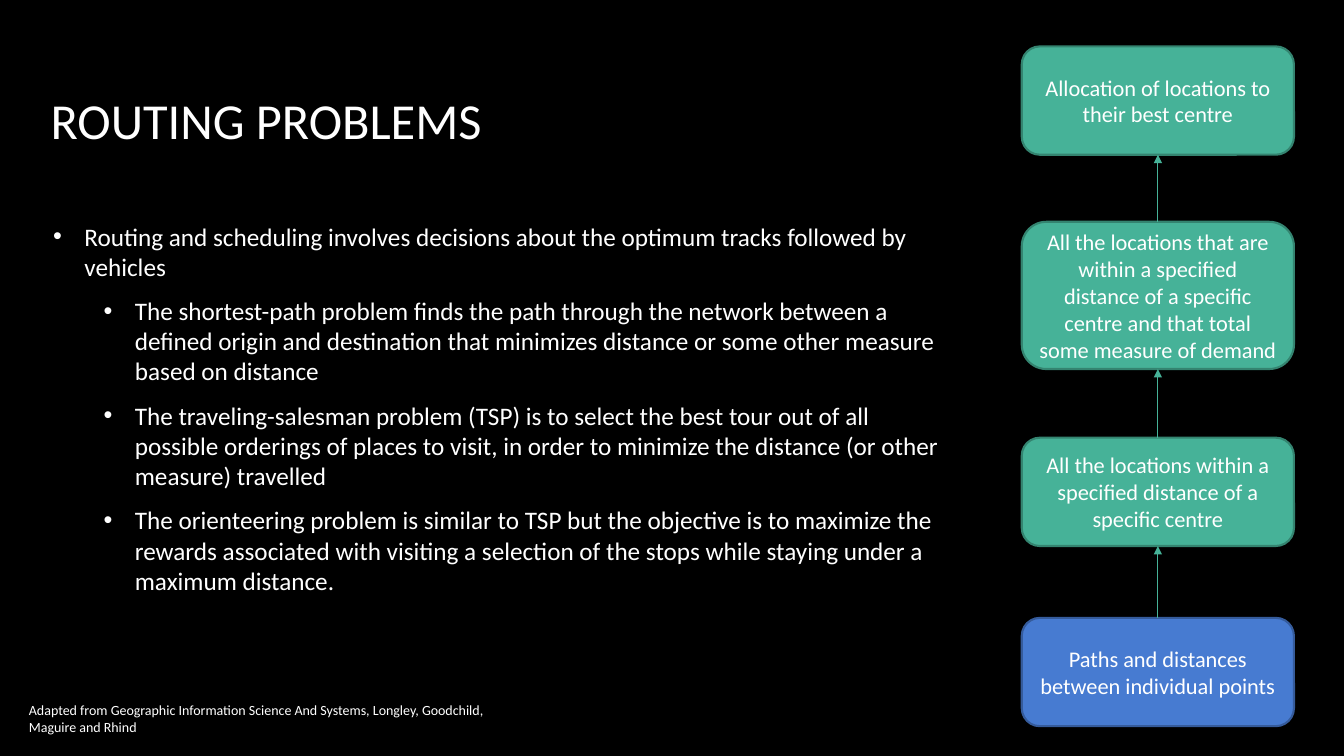
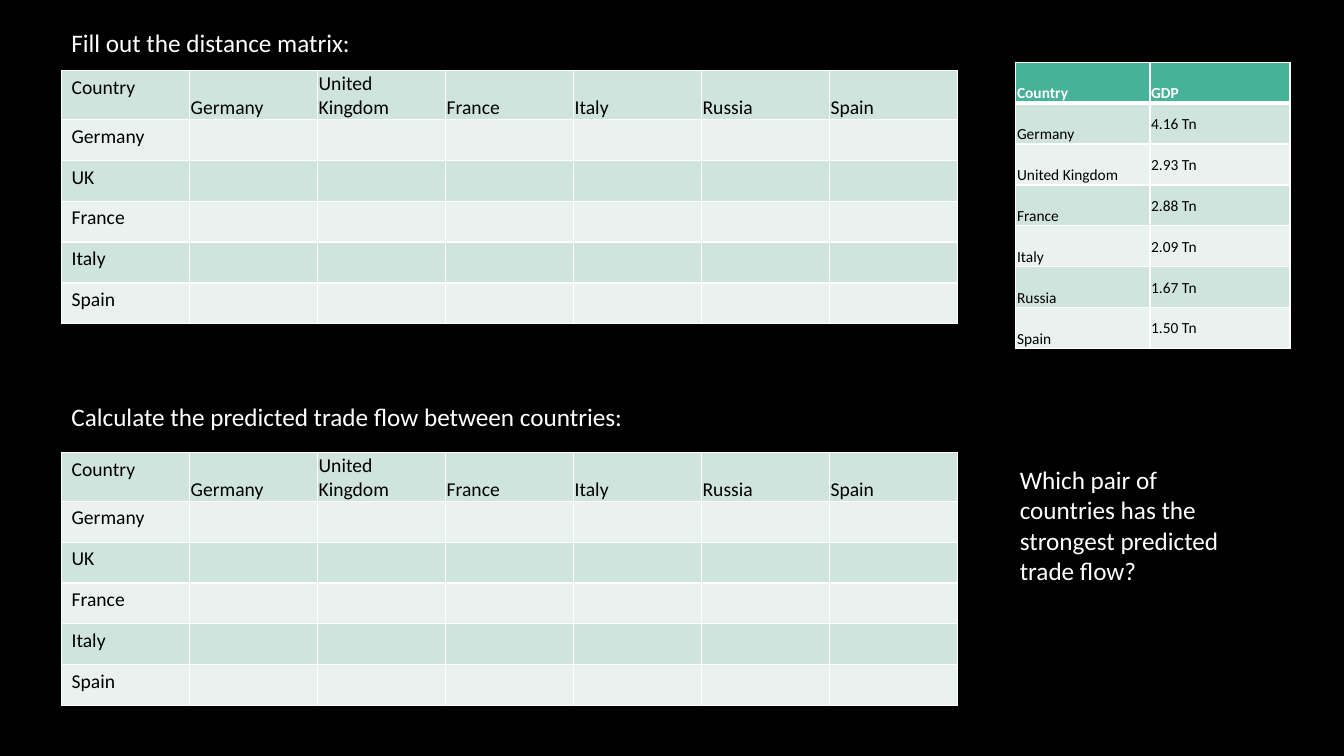
import pptx
import pptx.dml.color
import pptx.enum.shapes
import pptx.enum.text
import pptx.oxml
import pptx.oxml.ns
import pptx.util
from lxml import etree

Cm = pptx.util.Cm
Pt = pptx.util.Pt
ANCHOR = pptx.enum.text.MSO_ANCHOR
ALIGN = pptx.enum.text.PP_ALIGN
AUTO_SIZE = pptx.enum.text.MSO_AUTO_SIZE
SHAPES = pptx.enum.shapes.MSO_SHAPE
qn = pptx.oxml.ns.qn

# Shared look
FONT = "Calibri"
BLACK, WHITE = "000000", "FFFFFF"
GREEN, GREEN_EDGE = "46B298", "348470"
BLUE, BLUE_EDGE = "477BD1", "355B9B"
BANDS = ("CFE4DD", "E9F2EF")
ROW_HEIGHT = 1.03
TIGHT = (0.03, 0.03, 0.03, 0)

COUNTRIES = ["Germany", "United Kingdom", "France", "Italy", "Russia", "Spain"]
MATRIX_ROWS = ["Germany", "UK", "France", "Italy", "Spain"]
GDP = ["4.16 Tn", "2.93 Tn", "2.88 Tn", "2.09 Tn", "1.67 Tn", "1.50 Tn"]

ROUTING_POINTS = [
    (0, "Routing and scheduling involves decisions about the optimum tracks "
        "followed by vehicles"),
    (1, "The shortest-path problem finds the path through the network between "
        "a defined origin and destination that minimizes distance or some "
        "other measure based on distance"),
    (1, "The traveling-salesman problem (TSP) is to select the best tour out of "
        "all possible orderings of places to visit, in order to minimize the "
        "distance (or other measure) travelled"),
    (1, "The orienteering problem is similar to TSP but the objective is to "
        "maximize the rewards associated with visiting a selection of the stops "
        "while staying under a maximum distance."),
]

# Offset from the top of the chart, height, fill, edge, text; from bottom to top
FLOW_STEPS = [
    (14.4, 2.73, BLUE, BLUE_EDGE, "Paths and distances between individual points"),
    (9.86, 2.73, GREEN, GREEN_EDGE,
     "All the locations within a specified distance of a specific centre"),
    (4.42, 3.71, GREEN, GREEN_EDGE,
     "All the locations that are within a specified distance of a specific "
     "centre and that total some measure of demand"),
    (0, 2.73, GREEN, GREEN_EDGE, "Allocation of locations to their best centre"),
]


def rgb(value):
    return pptx.dml.color.RGBColor.from_string(value)


def lengths(values):
    return [Cm(value) for value in values]


def format_text(paragraph, text, size=18, color=WHITE, bold=False, align=ALIGN.LEFT):
    run = paragraph.add_run()
    run.text = text
    run.font.name = FONT
    run.font.size = Pt(size)
    run.font.bold = bold
    run.font.color.rgb = rgb(color)
    paragraph.alignment = align


def add_text(slide, box, text, wrap=True, grow=True, anchor=ANCHOR.TOP, **text_format):
    frame = slide.shapes.add_textbox(*lengths(box)).text_frame
    frame.word_wrap = wrap
    frame.auto_size = AUTO_SIZE.SHAPE_TO_FIT_TEXT if grow else AUTO_SIZE.NONE
    frame.vertical_anchor = anchor
    format_text(frame.paragraphs[0], text, **text_format)


def set_title(slide, box, text):
    title = slide.shapes.title
    title.left, title.top, title.width, title.height = lengths(box)
    title.text_frame.vertical_anchor = ANCHOR.TOP
    title.text_frame.auto_size = AUTO_SIZE.NONE
    format_text(title.text_frame.paragraphs[0], text, size=36)


def add_bullets(slide, box, points):
    frame = slide.shapes.add_textbox(*lengths(box)).text_frame
    frame.word_wrap = True
    frame.auto_size = AUTO_SIZE.SHAPE_TO_FIT_TEXT
    for index, (level, text) in enumerate(points):
        paragraph = frame.add_paragraph() if index else frame.paragraphs[0]
        paragraph.level = level
        paragraph.space_after = Pt(10)
        properties = paragraph._p.get_or_add_pPr()
        properties.set("marL", str(Cm(0.79 + 1.27 * level)))
        properties.set("indent", str(-Cm(0.79)))
        bullet_font = etree.SubElement(properties, qn("a:buFont"))
        bullet_font.set("typeface", "Arial")
        etree.SubElement(properties, qn("a:buChar")).set("char", "•")
        format_text(paragraph, text)


def add_arrow(slide, lower, upper):
    """Arrow from the top of one step to the bottom of the next."""
    arrow = slide.shapes.add_connector(
        pptx.enum.shapes.MSO_CONNECTOR.STRAIGHT, 0, 0, 0, 0)
    arrow.begin_connect(lower, 0)
    arrow.end_connect(upper, 2)
    arrow.line.color.rgb = rgb(GREEN)
    arrow.line.width = Pt(0.75)
    line = arrow.line._get_or_add_ln()
    etree.SubElement(line, qn("a:tailEnd")).set("type", "triangle")
    etree.SubElement(arrow._element.spPr, qn("a:effectLst"))


def add_flow_chart(slide, box, steps):
    left, top, width, _ = box
    shapes = []
    for offset, height, fill, edge, text in steps:
        shape = slide.shapes.add_shape(
            SHAPES.ROUNDED_RECTANGLE, *lengths((left, top + offset, width, height)))
        shape.shadow.inherit = False
        shape.fill.solid()
        shape.fill.fore_color.rgb = rgb(fill)
        shape.line.color.rgb = rgb(edge)
        shape.line.width = Pt(1.5)
        shape.text_frame.word_wrap = True
        shape.text_frame.vertical_anchor = ANCHOR.MIDDLE
        format_text(shape.text_frame.paragraphs[0], text, size=16, align=ALIGN.CENTER)
        shapes.append(shape)
    for lower, upper in zip(shapes, shapes[1:]):
        add_arrow(slide, lower, upper)


def set_cell(cell, text, fill, insets=None, anchor=ANCHOR.TOP, bottom_border=1,
             **text_format):
    properties = cell._tc.get_or_add_tcPr()
    # Borders come before the fill in the cell properties
    for side, width in (("L", 1), ("R", 1), ("T", 1), ("B", bottom_border)):
        border = etree.SubElement(properties, qn("a:ln" + side))
        border.set("w", str(Pt(width)))
        solid = etree.SubElement(border, qn("a:solidFill"))
        etree.SubElement(solid, qn("a:srgbClr")).set("val", WHITE)
    cell.fill.solid()
    cell.fill.fore_color.rgb = rgb(fill)
    cell.vertical_anchor = anchor
    if insets:
        (cell.margin_left, cell.margin_right,
         cell.margin_top, cell.margin_bottom) = lengths(insets)
    if text:
        format_text(cell.text_frame.paragraphs[0], text, **text_format)


def add_grid(slide, left, top, column_widths, row_heights):
    frame = slide.shapes.add_table(
        len(row_heights), len(column_widths),
        *lengths((left, top, sum(column_widths), sum(row_heights))))
    for column, width in zip(frame.table.columns, column_widths):
        column.width = Cm(width)
    for row, height in zip(frame.table.rows, row_heights):
        row.height = Cm(height)
    return frame.table


def add_matrix(slide, box, caption, caption_width, table_offset):
    """Caption with an empty country-by-country table below it."""
    left, top, width, _ = box
    add_text(slide, (left, top, caption_width, 1.02), caption, wrap=False)
    columns = len(COUNTRIES) + 1
    table = add_grid(slide, left, top + table_offset, [width / columns] * columns,
                     [1.23] + [ROW_HEIGHT] * len(MATRIX_ROWS))
    for column, text in enumerate(["Country"] + COUNTRIES):
        placing = {"insets": TIGHT, "anchor": ANCHOR.BOTTOM} if column else {}
        set_cell(table.cell(0, column), text, BANDS[0], size=14, color=BLACK, **placing)
    for row, country in enumerate(MATRIX_ROWS, 1):
        for column in range(columns):
            set_cell(table.cell(row, column), "" if column else country,
                     BANDS[row % 2], size=14, color=BLACK)


def add_gdp_table(slide, box):
    left, top, width, _ = box
    table = add_grid(slide, left, top, [3.38, width - 3.38],
                     [ROW_HEIGHT] * (len(COUNTRIES) + 1))
    for column, text in enumerate(("Country", "GDP")):
        set_cell(table.cell(0, column), text, GREEN, TIGHT, ANCHOR.BOTTOM,
                 bottom_border=3, size=11, bold=True)
    for row, values in enumerate(zip(COUNTRIES, GDP), 1):
        for column, text in enumerate(values):
            set_cell(table.cell(row, column), text, BANDS[(row - 1) % 2], TIGHT,
                     ANCHOR.MIDDLE if column else ANCHOR.BOTTOM, size=11, color=BLACK)


def build_routing_slide(presentation):
    slide = presentation.slides.add_slide(presentation.slide_layouts[5])
    set_title(slide, (1.02, 2.11, 24.61, 2.18), "ROUTING PROBLEMS")
    add_bullets(slide, (1.09, 5.44, 23.16, 9.78), ROUTING_POINTS)
    add_text(slide, (0.48, 17.53, 12.85, 1.14),
             "Adapted from Geographic Information Science And Systems, Longley, "
             "Goodchild, Maguire and Rhind",
             grow=False, anchor=ANCHOR.MIDDLE, size=10)
    add_flow_chart(slide, (25.75, 1.17, 6.86, 17.13), FLOW_STEPS)


def build_trade_slide(presentation):
    slide = presentation.slides.add_slide(presentation.slide_layouts[6])
    add_matrix(slide, (1.55, 0.56, 22.58, 7.6), "Fill out the distance matrix:",
               caption_width=7.62, table_offset=1.22)
    add_matrix(slide, (1.55, 9.98, 22.58, 7.8),
               "Calculate the predicted trade flow between countries:",
               caption_width=14.73, table_offset=1.42)
    add_gdp_table(slide, (25.6, 1.57, 6.91, 7.21))
    add_text(slide, (25.45, 11.58, 5.97, 3.33),
             "Which pair of countries has the strongest predicted trade flow?")


def main():
    presentation = pptx.Presentation()
    presentation.slide_width, presentation.slide_height = Cm(33.87), Cm(19.05)
    background = presentation.slide_master.background.fill
    background.solid()
    background.fore_color.rgb = rgb(BLACK)
    build_routing_slide(presentation)
    build_trade_slide(presentation)
    presentation.save("out.pptx")


if __name__ == "__main__":
    main()
